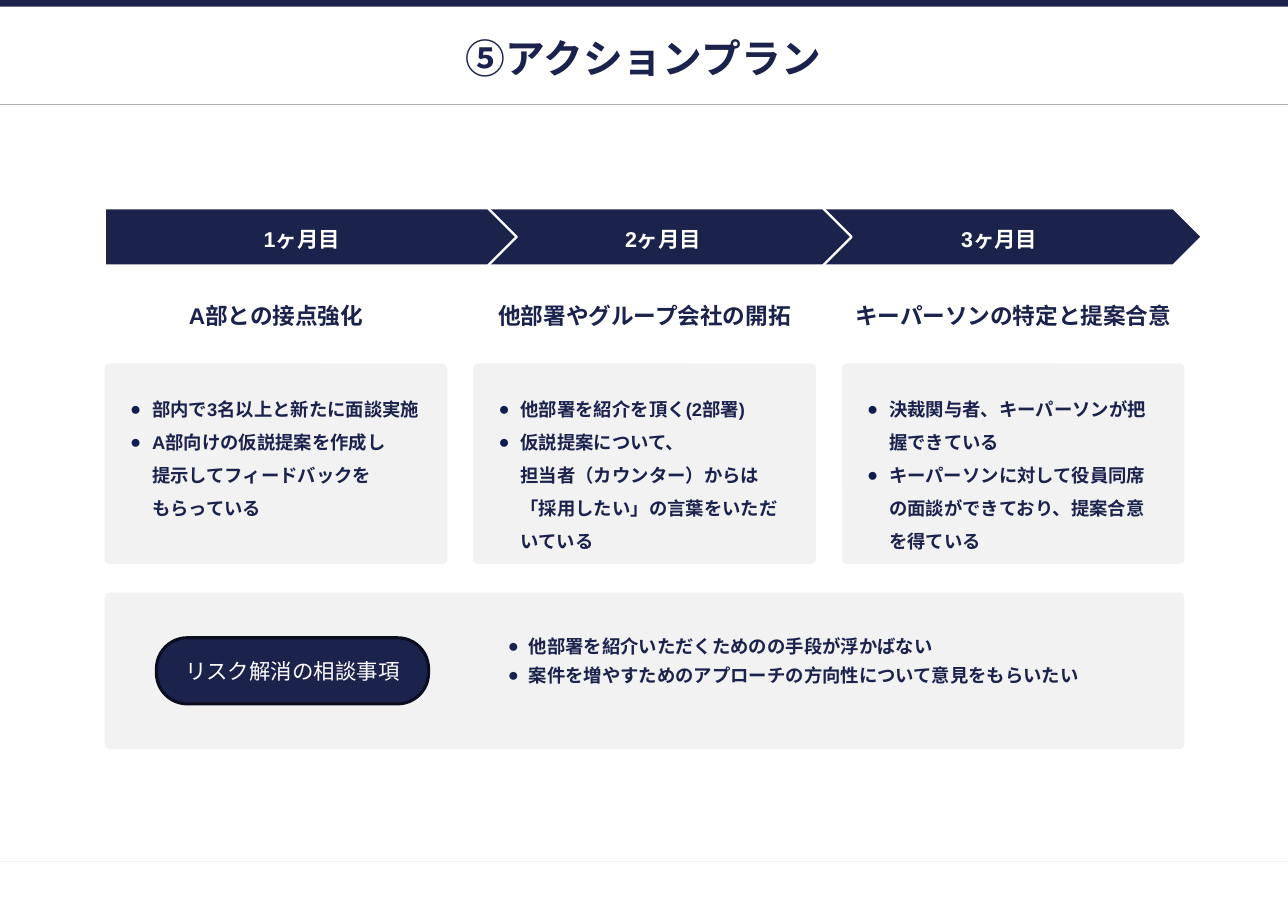
from lxml.etree import SubElement
from pptx import Presentation
from pptx.dml.color import RGBColor
from pptx.enum.shapes import MSO_CONNECTOR, MSO_SHAPE
from pptx.enum.text import MSO_ANCHOR, MSO_AUTO_SIZE, PP_ALIGN
from pptx.oxml.ns import qn
from pptx.util import Inches, Pt

COLORS = {"navy": "1B224C", "bullet": "0F1C50", "edge": "0B0E20", "panel": "F2F2F2",
          "rule": "AFAFAF", "white": "FFFFFF"}
FONT = "Arial"
SLIDE_W, SLIDE_H = 11.69, 8.27
LEFT, PLAN_W, COLUMN_W = 0.95, 9.8, 3.11
COLUMN_STEP = (PLAN_W - COLUMN_W) / 2

# label, arrow left, label left
MONTHS = [("1ヶ月目", 0.95, 1.52), ("2ヶ月目", 3.99, 4.8), ("3ヶ月目", 7.17, 7.85)]
# heading, width of the goal text, goals
GOALS = [
    ("A部との接点強化", 2.82,
     ["部内で3名以上と新たに面談実施",
      "A部向けの仮説提案を作成し\n提示してフィードバックを\nもらっている"]),
    ("他部署やグループ会社の開拓", 2.72,
     ["他部署を紹介を頂く(2部署)",
      "仮説提案について、\n担当者（カウンター）からは「採用したい」の言葉をいただいている"]),
    ("キーパーソンの特定と提案合意", 2.72,
     ["決裁関与者、キーパーソンが把握できている",
      "キーパーソンに対して役員同席の面談ができており、提案合意を得ている"]),
]
RISKS = ["他部署を紹介いただくためのの手段が浮かばない",
         "案件を増やすためのアプローチの方向性について意見をもらいたい"]


def rgb(name):
    return RGBColor.from_string(COLORS[name])


def inches(*lengths):
    return [Inches(length) for length in lengths]


def add_panel(slide, kind, box, fill, adjust=None, line=None, line_width=0):
    panel = slide.shapes.add_shape(kind, *inches(*box))
    panel.shadow.inherit = False
    panel.fill.solid()
    panel.fill.fore_color.rgb = rgb(fill)
    if adjust is not None:
        panel.adjustments[0] = adjust
    if line:
        panel.line.color.rgb = rgb(line)
        panel.line.width = Pt(line_width)
    else:
        panel.line.fill.background()
    return panel


def add_rule(slide, y, color):
    rule = slide.shapes.add_connector(MSO_CONNECTOR.STRAIGHT, *inches(0, y, SLIDE_W, y))
    rule.line.color.rgb = rgb(color)
    rule.line.width = Pt(0.75)
    SubElement(rule._element.spPr, qn("a:effectLst"))


def write(paragraph, text, size, color, bold=True):
    paragraph.text = text
    for run in paragraph.runs:
        run.font.name = FONT
        run.font.size = Pt(size)
        run.font.bold = bold
        run.font.color.rgb = rgb(color)


def add_frame(slide, box, bottom=0.04):
    frame = slide.shapes.add_textbox(*inches(*box)).text_frame
    frame.word_wrap = True
    frame.margin_left = frame.margin_right = frame.margin_top = Inches(0.04)
    frame.margin_bottom = Inches(bottom)
    return frame


def add_label(slide, box, text, size, color, bottom=0.04):
    frame = add_frame(slide, box, bottom)
    frame.vertical_anchor = MSO_ANCHOR.MIDDLE
    write(frame.paragraphs[0], text, size, color)
    frame.paragraphs[0].alignment = PP_ALIGN.CENTER


def add_bullets(slide, box, items, bullet_color, margin, hang, line_spacing=None, gap=0):
    frame = add_frame(slide, box)
    frame.auto_size = MSO_AUTO_SIZE.SHAPE_TO_FIT_TEXT
    for index, item in enumerate(items):
        paragraph = frame.add_paragraph() if index else frame.paragraphs[0]
        properties = paragraph._p.get_or_add_pPr()
        properties.set("marL", str(Inches(margin)))
        properties.set("indent", str(-Inches(hang)))
        color = SubElement(properties, qn("a:buClr"))
        SubElement(color, qn("a:srgbClr"), val=COLORS[bullet_color])
        SubElement(properties, qn("a:buFont"), typeface=FONT)
        SubElement(properties, qn("a:buChar"), char="●")
        if line_spacing:
            paragraph.line_spacing = line_spacing
        if index and gap:
            paragraph.space_before = Pt(gap)
        write(paragraph, item, 12, "navy")


def add_page_frame(slide, title):
    add_rule(slide, 7.82, "panel")
    add_panel(slide, MSO_SHAPE.RECTANGLE, (0, 0, SLIDE_W, 0.06), "navy")
    add_rule(slide, 0.95, "rule")
    add_label(slide, (0.53, 0.32, 10.62, 0.43), title, 26, "navy", bottom=0.06)


def add_timeline(slide, top):
    """Lay the month arrows from right to left, so each tip covers the next arrow."""
    for _, arrow_left, _ in reversed(MONTHS):
        add_panel(slide, MSO_SHAPE.PENTAGON, (arrow_left, top, 3.74, 0.52), "navy",
                  0.5, "white", 1.5)
    for month, _, label_left in MONTHS:
        add_label(slide, (label_left, top + 0.09, 2.44, 0.38), month, 14, "white")


def add_goal_column(slide, left, top, heading, text_width, goals):
    add_label(slide, (left, top, COLUMN_W, 0.52), heading, 14.8, "navy")
    add_panel(slide, MSO_SHAPE.ROUNDED_RECTANGLE, (left, top + 0.7, COLUMN_W, 1.82),
              "panel", 0.024)
    add_bullets(slide, (left + 0.19, top + 0.87, text_width, 1.59), goals, "bullet",
                0.2, 0.2, line_spacing=1.5)


def add_risk_panel(slide, left, top):
    add_panel(slide, MSO_SHAPE.ROUNDED_RECTANGLE, (left, top, PLAN_W, 1.42), "panel", 0.035)
    add_bullets(slide, (left + 3.43, top + 0.35, 5.88, 0.6), RISKS, "navy",
                0.38, 0.19, gap=4)
    badge = add_panel(slide, MSO_SHAPE.ROUNDED_RECTANGLE,
                      (left + 0.47, top + 0.41, 2.47, 0.6), "navy", 0.467, "edge", 2)
    badge.text_frame.vertical_anchor = MSO_ANCHOR.MIDDLE
    topic = badge.text_frame.paragraphs[0]
    write(topic, "リスク解消の相談事項", 14, "white", bold=False)
    topic.alignment = PP_ALIGN.CENTER


def main():
    deck = Presentation()
    deck.slide_width, deck.slide_height = inches(SLIDE_W, SLIDE_H)
    slide = deck.slides.add_slide(deck.slide_layouts[6])
    add_page_frame(slide, "⑤アクションプラン")
    add_timeline(slide, 1.89)
    for index, column in enumerate(GOALS):
        add_goal_column(slide, LEFT + index * COLUMN_STEP, 2.6, *column)
    add_risk_panel(slide, LEFT, 5.38)
    deck.save("out.pptx")


if __name__ == "__main__":
    main()
